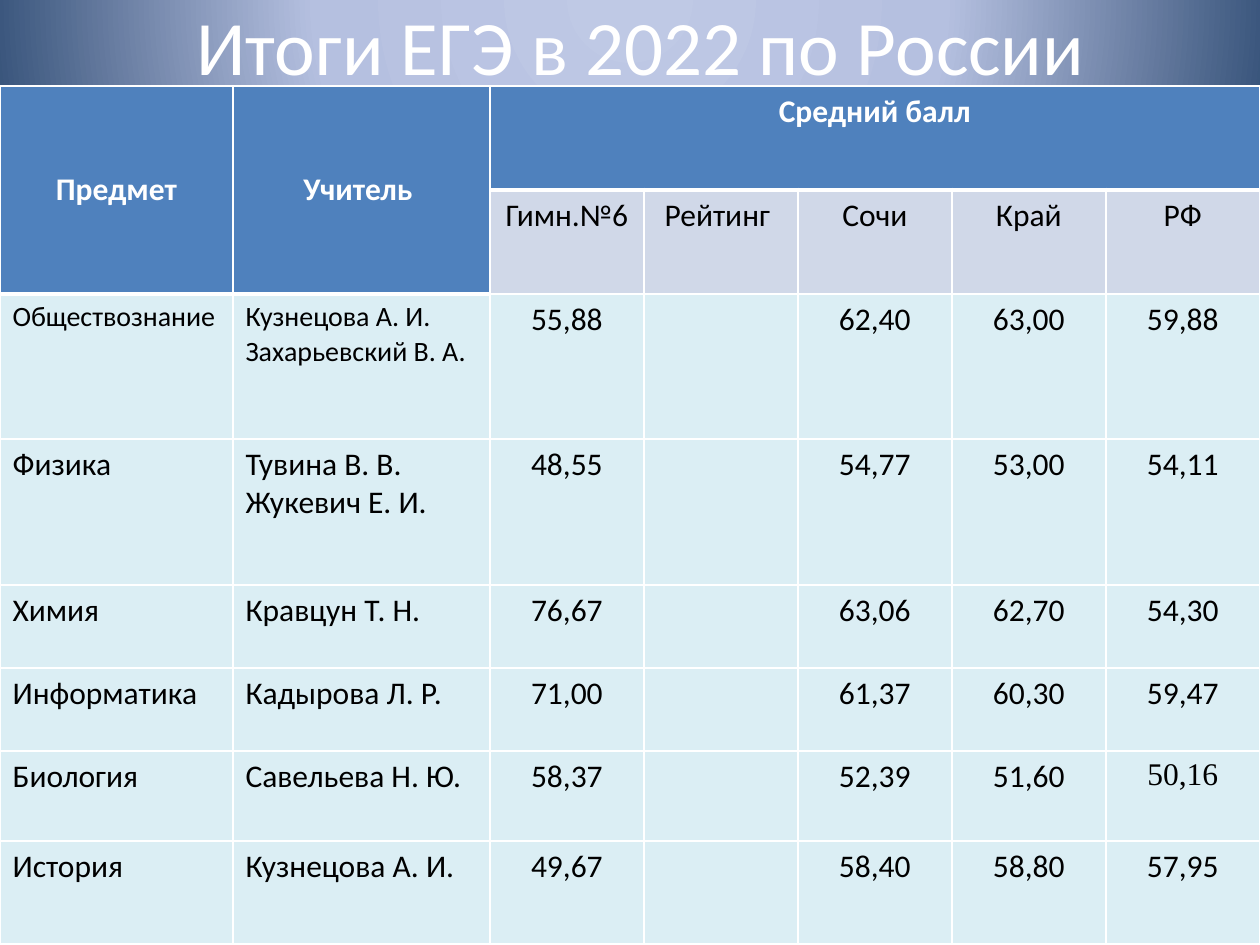
from dataclasses import dataclass

from lxml import etree
from pptx import Presentation
from pptx.dml.color import RGBColor
from pptx.enum.text import MSO_ANCHOR, MSO_AUTO_SIZE, PP_ALIGN
from pptx.oxml import parse_xml
from pptx.oxml.ns import nsdecls, qn
from pptx.util import Emu, Pt

LEFT, CENTER = PP_ALIGN.LEFT, PP_ALIGN.CENTER
TOP, MIDDLE = MSO_ANCHOR.TOP, MSO_ANCHOR.MIDDLE
NO_FIT = MSO_AUTO_SIZE.NONE
EMU_PER_PX = 914400 / 126
TITLE_ONLY = 5


@dataclass(frozen=True)
class Theme:
    font: str = "Calibri"
    serif: str = "Times New Roman"
    white: str = "FFFFFF"
    black: str = "000000"
    header: str = "4F81BD"
    subheader: str = "D0D8E8"
    body: str = "DBEEF4"
    backdrop: tuple = ((0, "BFC9E5"), (40, "B5C0E0"), (100, "00234D"))
    title_size: int = 44
    text_size: int = 18
    small_size: int = 16
    thin: int = 1
    thick: int = 3


@dataclass(frozen=True)
class Style:
    fill: str
    color: str = "000000"
    size: int = 18
    font: str = "Calibri"
    bold: bool = False
    align: PP_ALIGN = CENTER
    anchor: MSO_ANCHOR = TOP


@dataclass(frozen=True)
class Result:
    subject: str
    teachers: str
    school: str
    city: str
    region: str
    country: str
    height: int
    name_size: int = 18
    country_font: str = "Calibri"


THEME = Theme()
HEADER = Style(THEME.header, THEME.white, bold=True)
HEADER_MIDDLE = Style(THEME.header, THEME.white, bold=True, anchor=MIDDLE)
SUBHEADER = Style(THEME.subheader)
COLUMNS = [233, 257] + [154] * 5
HEADER_HEIGHTS = [104, 104]
SCORES = ["Гимн.№6", "Рейтинг ", "Сочи", "Край", "РФ"]
RESULTS = [
    Result("Обществознание", "Кузнецова А. И.\nЗахарьевский В. А.",
           "55,88", "62,40", "63,00", "59,88", 145, THEME.small_size),
    Result("Физика", "Тувина В. В.\nЖукевич Е. И.",
           "48,55", "54,77", "53,00", "54,11", 146),
    Result("Химия", "Кравцун Т. Н.", "76,67", "63,06", "62,70", "54,30", 83),
    Result("Информатика", "Кадырова Л. Р.", "71,00", "61,37", "60,30", "59,47", 83),
    Result("Биология", "Савельева Н. Ю.", "58,37", "52,39", "51,60", "50,16", 90,
           country_font=THEME.serif),
    Result("История", "Кузнецова А. И.", "49,67", "58,40", "58,80", "57,95", 103),
]


def px(length: int) -> Emu:
    return Emu(round(length * EMU_PER_PX))


def apply(target, values: dict) -> None:
    for name, value in values.items():
        setattr(target, name, value)


def write(frame, text: str, style: Style) -> None:
    frame.text = text
    for para in frame.paragraphs:
        para.alignment = style.align
        for span in para.runs:
            apply(span.font, {"name": style.font, "size": Pt(style.size), "bold": style.bold})
            span.font.color.rgb = RGBColor.from_string(style.color)


def paint_background(page) -> None:
    page.background.fill.gradient()
    gradient = page.element.find(".//" + qn("a:gradFill"))
    for child in list(gradient):
        gradient.remove(child)
    stops = etree.SubElement(gradient, qn("a:gsLst"))
    for position, color in THEME.backdrop:
        stop = etree.SubElement(stops, qn("a:gs"), pos=str(position * 1000))
        etree.SubElement(stop, qn("a:srgbClr"), val=color)
    shade = etree.SubElement(gradient, qn("a:path"), {"path": "circle"})
    etree.SubElement(shade, qn("a:fillToRect"), l="50000", t="-80000", r="50000", b="180000")


def draw_title(page, text: str) -> None:
    title = page.shapes.title
    apply(title, {"left": px(74), "top": px(-34), "width": px(1134), "height": px(158)})
    frame = title.text_frame
    apply(frame, {"word_wrap": True, "auto_size": NO_FIT, "vertical_anchor": MIDDLE})
    write(frame, text, Style("", THEME.white, THEME.title_size))


def border(cell, row: int, column: int) -> None:
    header_end = 0 if column >= 2 else 1
    top = THEME.thick if row == header_end + 1 else THEME.thin
    bottom = THEME.thick if row <= header_end else THEME.thin
    properties = cell._tc.get_or_add_tcPr()
    for side, width in (("L", THEME.thin), ("R", THEME.thin), ("T", top), ("B", bottom)):
        properties.append(parse_xml(
            f'<a:ln{side} {nsdecls("a")} w="{Pt(width)}"><a:solidFill>'
            f'<a:srgbClr val="{THEME.white}"/></a:solidFill></a:ln{side}>'))


def fill_cell(cell, text: str, style: Style) -> None:
    cell.fill.solid()
    cell.fill.fore_color.rgb = RGBColor.from_string(style.fill)
    cell.vertical_anchor = style.anchor
    if text:
        write(cell.text_frame, text, style)


def result_cells(result: Result) -> list[tuple[str, Style]]:
    name = Style(THEME.body, size=result.name_size, align=LEFT)
    score = Style(THEME.body)
    return [
        (result.subject, name), (result.teachers, name), (result.school, score),
        ("", score), (result.city, score), (result.region, score),
        (result.country, Style(THEME.body, font=result.country_font)),
    ]


def draw_table(page) -> None:
    heights = HEADER_HEIGHTS + [result.height for result in RESULTS]
    table = page.shapes.add_table(len(heights), len(COLUMNS), px(0), px(86),
                                  px(sum(COLUMNS)), px(sum(heights))).table
    for column, width in zip(table.columns, COLUMNS):
        column.width = px(width)
    for row, height in zip(table.rows, heights):
        row.height = px(height)

    rows = [
        [("Предмет", HEADER_MIDDLE), ("Учитель ", HEADER_MIDDLE), ("Средний балл", HEADER)]
        + [("", HEADER)] * 4,
        [("", HEADER)] * 2 + [(label, SUBHEADER) for label in SCORES],
    ] + [result_cells(result) for result in RESULTS]

    for first, last in (((0, 0), (1, 0)), ((0, 1), (1, 1)), ((0, 2), (0, 6))):
        table.cell(*first).merge(table.cell(*last))
    for row, cells in enumerate(rows):
        for column, (text, style) in enumerate(cells):
            cell = table.cell(row, column)
            border(cell, row, column)
            fill_cell(cell, text, style)


def main() -> None:
    deck = Presentation()
    apply(deck, {"slide_width": px(1260), "slide_height": px(945)})
    page = deck.slides.add_slide(deck.slide_layouts[TITLE_ONLY])
    paint_background(page)
    draw_title(page, "Итоги ЕГЭ в 2022 по России")
    draw_table(page)
    deck.save("out.pptx")


if __name__ == "__main__":
    main()
